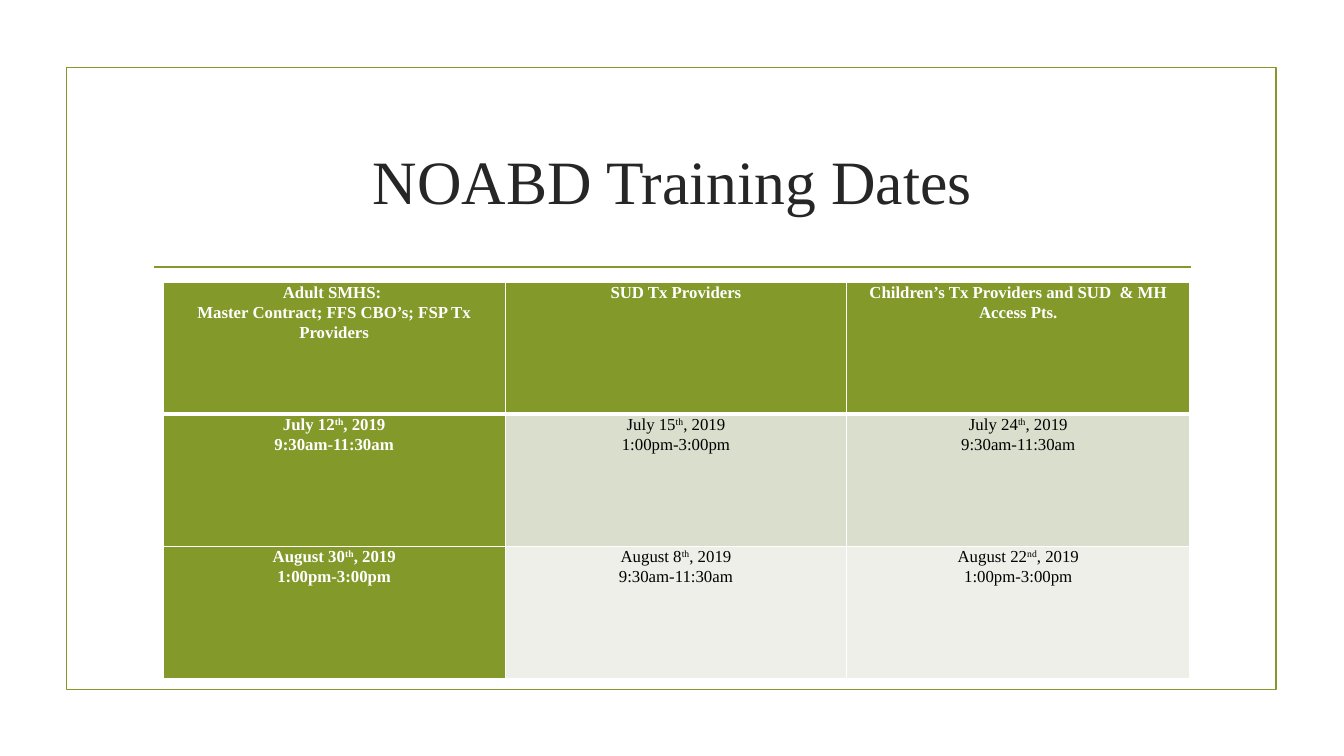
"""Build the NOABD training dates slide."""
import pptx
import pptx.util
import pptx.dml.color
import pptx.enum.shapes
import pptx.enum.text
import pptx.oxml
import pptx.oxml.ns

Inches = pptx.util.Inches
Pt = pptx.util.Pt
RGBColor = pptx.dml.color.RGBColor

TITLE = "NOABD Training Dates"
HEADS = [
    ["Adult SMHS: ", "Master Contract; FFS CBO’s; FSP Tx Providers"],
    ["SUD Tx Providers"],
    ["Children’s Tx Providers and SUD  & MH Access Pts."],
]
DATES = [
    [("July 12", "th", "9:30am-11:30am"),
     ("July 15", "th", "1:00pm-3:00pm"),
     ("July 24", "th", "9:30am-11:30am")],
    [("August 30", "th", "1:00pm-3:00pm"),
     ("August 8", "th", "9:30am-11:30am"),
     ("August 22", "nd", "1:00pm-3:00pm")],
]
YEAR = ", 2019"
FONT = "Times New Roman"
GREEN = RGBColor(0x83, 0x99, 0x2A)
WHITE = RGBColor(0xFF, 0xFF, 0xFF)
BLACK = RGBColor(0, 0, 0)
INK = RGBColor(0x26, 0x26, 0x26)
BANDS = [GREEN, RGBColor(0xD9, 0xDE, 0xCD), RGBColor(0xED, 0xEF, 0xE8)]
WIDTHS = [3.39, 3.39, 3.4]
HIGH = 1.31


def add_run(para, text, size, color, bold=False, raised=False):
    run = para.add_run()
    run.text = text
    font = run.font
    font.name, font.size, font.bold = FONT, Pt(size), bold
    font.color.rgb = color
    if raised:
        run._r.get_or_add_rPr().set("baseline", "30000")


def add_edge(cell, side, points):
    space = pptx.oxml.ns.nsdecls("a")
    cell._tc.get_or_add_tcPr().append(pptx.oxml.parse_xml(
        f'<a:ln{side} {space} w="{Pt(points)}"><a:solidFill>'
        f'<a:srgbClr val="{WHITE}"/></a:solidFill></a:ln{side}>'))


def fill_cell(cell, row, col, lines):
    for side in "LRTB":
        thick = (row, side) in [(0, "B"), (1, "T")]
        add_edge(cell, side, 3 if thick else 1)
    lead = row == 0 or col == 0
    cell.fill.solid()
    cell.fill.fore_color.rgb = GREEN if lead else BANDS[row]
    cell.margin_left = cell.margin_right = Inches(0.07)
    cell.margin_top = cell.margin_bottom = 0
    frame = cell.text_frame
    for index, line in enumerate(lines):
        para = frame.add_paragraph() if index else frame.paragraphs[0]
        para.alignment = pptx.enum.text.PP_ALIGN.CENTER
        para.line_spacing = 1.07
        for part, text in enumerate(line):
            add_run(para, text, 12, WHITE if lead else BLACK, lead, part == 1)


def main():
    deck = pptx.Presentation()
    deck.slide_width, deck.slide_height = Inches(13.33), Inches(7.5)
    shapes = deck.slides.add_slide(deck.slide_layouts[6]).shapes

    frame = shapes.add_shape(
        pptx.enum.shapes.MSO_SHAPE.RECTANGLE,
        Inches(0.66), Inches(0.67), Inches(12), Inches(6.17))
    frame.shadow.inherit = False
    frame.fill.background()
    rule = shapes.add_connector(
        pptx.enum.shapes.MSO_CONNECTOR.STRAIGHT,
        Inches(1.53), Inches(2.65), Inches(11.81), Inches(2.65))
    rule._element.spPr.append(pptx.oxml.parse_xml(
        f'<a:effectLst {pptx.oxml.ns.nsdecls("a")}/>'))
    for shape in (frame, rule):
        shape.line.color.rgb = GREEN
        shape.line.width = Pt(1.25)

    title = shapes.add_textbox(
        Inches(1.42), Inches(1.07), Inches(10.5), Inches(1.43)).text_frame
    title.word_wrap = True
    title.vertical_anchor = pptx.enum.text.MSO_ANCHOR.MIDDLE
    para = title.paragraphs[0]
    para.alignment = pptx.enum.text.PP_ALIGN.CENTER
    add_run(para, TITLE, 44, INK)

    rows = [[[(line,) for line in head] for head in HEADS]]
    rows += [[[(day, mark, YEAR), (time,)] for day, mark, time in row]
             for row in DATES]
    table = shapes.add_table(
        len(rows), len(WIDTHS), Inches(1.62), Inches(2.8),
        Inches(sum(WIDTHS)), Inches(HIGH * len(rows))).table
    for col, width in enumerate(WIDTHS):
        table.columns[col].width = Inches(width)
    for row, cells in enumerate(rows):
        table.rows[row].height = Inches(HIGH)
        for col, lines in enumerate(cells):
            fill_cell(table.cell(row, col), row, col, lines)

    deck.save("out.pptx")


if __name__ == "__main__":
    main()
